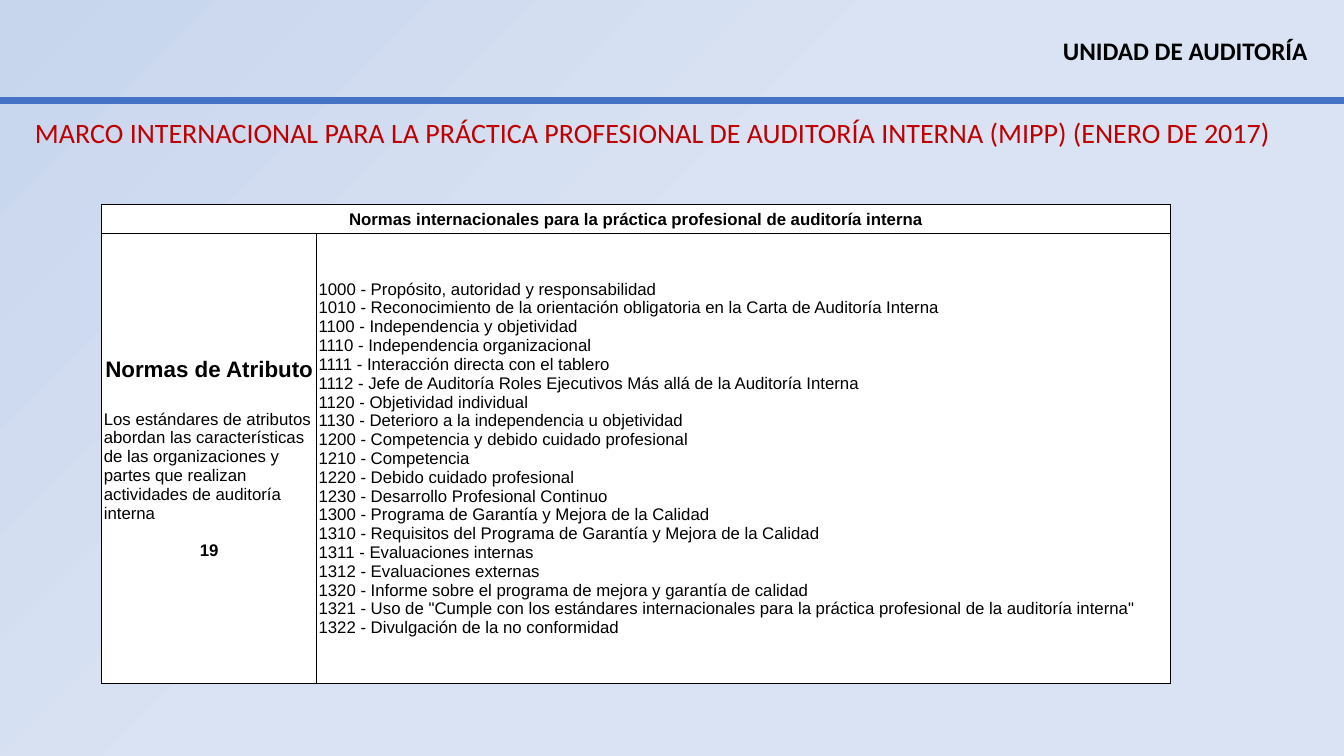
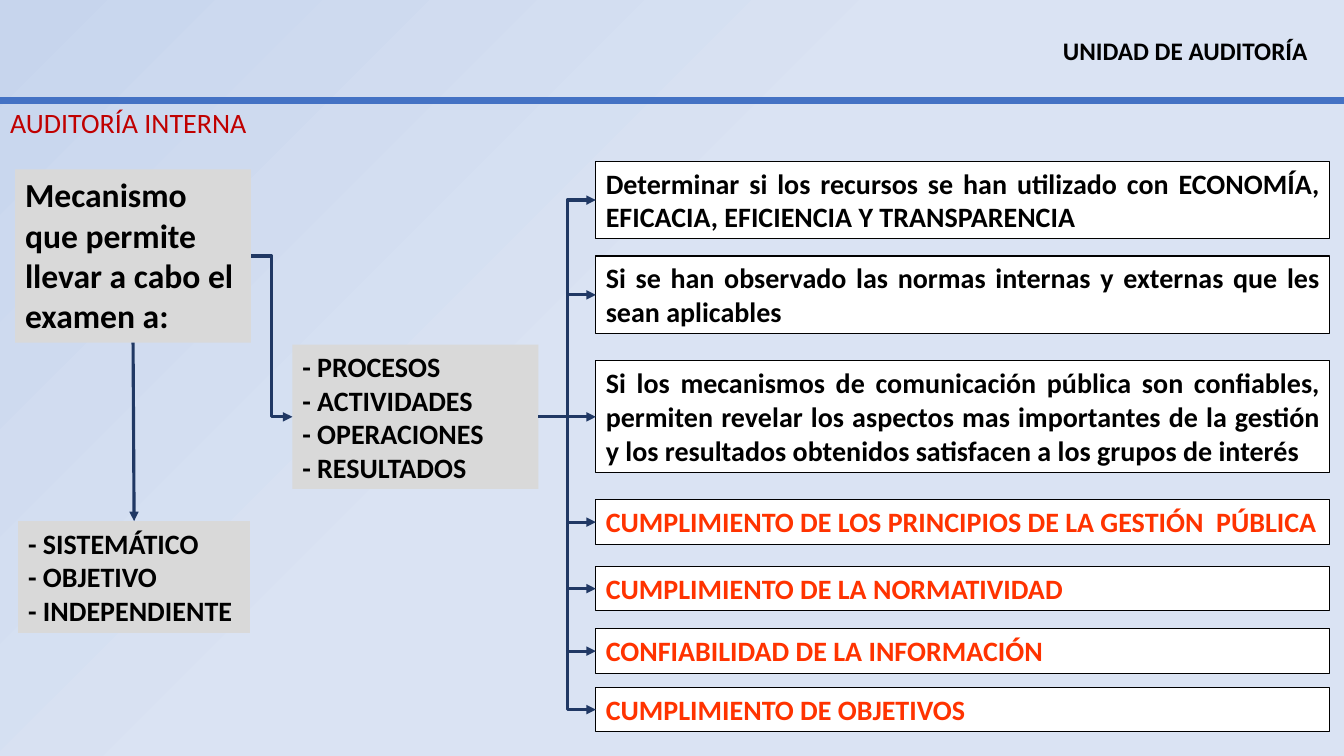
import pptx
import pptx.dml.color
import pptx.enum.shapes
import pptx.enum.text
import pptx.oxml
import pptx.oxml.ns
import pptx.util
from lxml import etree

Inches = pptx.util.Inches
Pt = pptx.util.Pt
RGBColor = pptx.dml.color.RGBColor
ALIGN = pptx.enum.text.PP_ALIGN
ANCHOR = pptx.enum.text.MSO_ANCHOR
AUTO_SIZE = pptx.enum.text.MSO_AUTO_SIZE
CONNECTOR = pptx.enum.shapes.MSO_CONNECTOR
qn = pptx.oxml.ns.qn

BLACK = RGBColor(0x00, 0x00, 0x00)
WHITE = RGBColor(0xFF, 0xFF, 0xFF)
GRAY = RGBColor(0xD9, 0xD9, 0xD9)
RED = RGBColor(0xC0, 0x00, 0x00)
ORANGE = RGBColor(0xFF, 0x33, 0x00)
BAND_BLUE = RGBColor(0x44, 0x72, 0xC4)
ARROW_BLUE = RGBColor(0x20, 0x38, 0x64)
BACKGROUND_LIGHT = RGBColor(0xDA, 0xE3, 0xF3)
BACKGROUND_DARK = RGBColor(0xC7, 0xD5, 0xED)

SLIDE_WIDTH, SLIDE_HEIGHT = 13.33, 7.5
TITLE_ONLY = 5
TOP, LEFT, BOTTOM, RIGHT = range(4)  # connection sites of a rectangle

ATTRIBUTE_STANDARDS = [
    "1000 - Propósito, autoridad y responsabilidad",
    "1010 - Reconocimiento de la orientación obligatoria en la Carta de Auditoría Interna",
    "1100 - Independencia y objetividad",
    "1110 - Independencia organizacional",
    "1111 - Interacción directa con el tablero",
    "1112 - Jefe de Auditoría Roles Ejecutivos Más allá de la Auditoría Interna",
    "1120 - Objetividad individual",
    "1130 - Deterioro a la independencia u objetividad",
    "1200 - Competencia y debido cuidado profesional",
    "1210 - Competencia",
    "1220 - Debido cuidado profesional",
    "1230 - Desarrollo Profesional Continuo",
    "1300 - Programa de Garantía y Mejora de la Calidad",
    "1310 - Requisitos del Programa de Garantía y Mejora de la Calidad",
    "1311 - Evaluaciones internas",
    "1312 - Evaluaciones externas",
    "1320 - Informe sobre el programa de mejora y garantía de calidad",
    '1321 - Uso de "Cumple con los estándares internacionales para la práctica profesional de la auditoría interna"',
    "1322 - Divulgación de la no conformidad",
]

# top, height, colour, text
AUDIT_GOALS = [
    (1.6, 0.77, BLACK, "Determinar si los recursos se han utilizado con ECONOMÍA, EFICACIA, EFICIENCIA Y TRANSPARENCIA"),
    (2.54, 0.77, BLACK, "Si se han observado las normas internas y externas que les sean aplicables"),
    (3.58, 1.11, BLACK, "Si los mecanismos de comunicación pública son confiables, permiten revelar los aspectos mas importantes de la gestión y los resultados obtenidos satisfacen a los grupos de interés"),
    (4.96, 0.44, ORANGE, "CUMPLIMIENTO DE LOS PRINCIPIOS DE LA GESTIÓN  PÚBLICA"),
    (5.62, 0.44, ORANGE, "CUMPLIMIENTO DE LA NORMATIVIDAD"),
    (6.24, 0.44, ORANGE, "CONFIABILIDAD DE LA INFORMACIÓN"),
    (6.82, 0.44, ORANGE, "CUMPLIMIENTO DE OBJETIVOS"),
]


def place(shape, left, top, width, height):
    shape.left, shape.top = Inches(left), Inches(top)
    shape.width, shape.height = Inches(width), Inches(height)


def format_paragraph(paragraph, size, color=BLACK, bold=False, align=ALIGN.LEFT, font="Calibri"):
    paragraph.alignment = align
    for run in paragraph.runs:
        run.font.name = font
        run.font.size = Pt(size)
        run.font.bold = bold
        run.font.color.rgb = color


def write(text_frame, text, size, **style):
    """Fill a text frame, one paragraph per line of text, in one style."""
    text_frame.text = text
    for paragraph in text_frame.paragraphs:
        format_paragraph(paragraph, size, **style)


def add_line(slide, kind, ends, color, width):
    connector = slide.shapes.add_connector(kind, *(Inches(value) for value in ends))
    connector.line.color.rgb = color
    connector.line.width = Pt(width)
    etree.SubElement(connector.element.spPr, qn("a:effectLst"))
    return connector


def add_arrow(slide, kind, start, start_site, end, end_site):
    connector = add_line(slide, kind, (0, 0, 1, 1), ARROW_BLUE, 2.25)
    connector.begin_connect(start, start_site)
    connector.end_connect(end, end_site)
    outline = connector.element.spPr.find(qn("a:ln"))
    etree.SubElement(outline, qn("a:tailEnd"), type="triangle")


def add_box(slide, box, text, fill, border=None, size=20, color=BLACK, align=ALIGN.LEFT):
    shape = slide.shapes.add_shape(
        pptx.enum.shapes.MSO_SHAPE.RECTANGLE, *(Inches(value) for value in box))
    shape.shadow.inherit = False
    shape.fill.solid()
    shape.fill.fore_color.rgb = fill
    if border is None:
        shape.line.fill.background()
    else:
        shape.line.color.rgb = border
        shape.line.width = Pt(0.75)
    frame = shape.text_frame
    frame.word_wrap = True
    frame.auto_size = AUTO_SIZE.SHAPE_TO_FIT_TEXT
    frame.vertical_anchor = ANCHOR.TOP
    write(frame, text, size, color=color, bold=True, align=align)
    return shape


def set_background(master):
    fill = master.background.fill
    fill.gradient()
    stops = ((0.54, BACKGROUND_LIGHT), (1, BACKGROUND_DARK))
    for stop, (position, color) in zip(fill.gradient_stops, stops):
        stop.position = position
        stop.color.rgb = color
    gradient = master.element.find(".//" + qn("a:gradFill"))
    gradient.remove(gradient.find(qn("a:lin")))
    circle = etree.SubElement(gradient, qn("a:path"), path="circle")
    etree.SubElement(circle, qn("a:fillToRect"), l="100000", t="100000")


def add_master_header(master, slide):
    """Build the header on a slide, then move it to the master that all slides share."""
    unit = slide.shapes.add_textbox(Inches(10.23), Inches(0.3), Inches(3.05), Inches(0.4))
    unit.text_frame.word_wrap = True
    unit.text_frame.auto_size = AUTO_SIZE.SHAPE_TO_FIT_TEXT
    write(unit.text_frame, "UNIDAD DE AUDITORÍA", 18, bold=True, align=ALIGN.CENTER)
    band = add_line(slide, CONNECTOR.STRAIGHT, (0, 1, SLIDE_WIDTH, 1), BAND_BLUE, 5)
    for shape_id, shape in enumerate((unit, band), start=101):
        shape.element.xpath(".//p:cNvPr")[0].set("id", str(shape_id))
        master.shapes.element.insert(2, shape.element)


def add_slide(presentation, title, box, align, wrap):
    slide = presentation.slides.add_slide(presentation.slide_layouts[TITLE_ONLY])
    shape = slide.shapes.title
    place(shape, *box)
    shape.text_frame.word_wrap = wrap
    shape.text_frame.auto_size = AUTO_SIZE.SHAPE_TO_FIT_TEXT
    shape.text_frame.vertical_anchor = ANCHOR.TOP
    write(shape.text_frame, title, 20, color=RED, align=align)
    return slide


def format_cell(cell):
    cell.fill.solid()
    cell.fill.fore_color.rgb = WHITE
    cell.vertical_anchor = ANCHOR.MIDDLE
    cell.margin_left = cell.margin_right = Inches(0.02)
    cell.margin_top = cell.margin_bottom = Inches(0.02)
    properties = cell._tc.get_or_add_tcPr()
    for index, side in enumerate(("lnL", "lnR", "lnT", "lnB")):
        border = etree.Element(qn("a:" + side), w=str(Pt(1)))
        solid = etree.SubElement(border, qn("a:solidFill"))
        etree.SubElement(solid, qn("a:srgbClr"), val=str(BLACK))
        properties.insert(index, border)


def add_standards_table(slide):
    table = slide.shapes.add_table(
        2, 2, Inches(1.01), Inches(2.03), Inches(10.6), Inches(4.75)).table
    table.first_row = table.horz_banding = False
    for column, width in zip(table.columns, (2.13, 8.47)):
        column.width = Inches(width)
    for row, height in zip(table.rows, (0.29, 4.46)):
        row.height = Inches(height)
    for cell in table.iter_cells():
        format_cell(cell)

    heading = table.cell(0, 0)
    heading.merge(table.cell(0, 1))
    write(heading.text_frame, "Normas internacionales para la práctica profesional de auditoría interna",
          12, bold=True, align=ALIGN.CENTER, font="Arial")

    summary = table.cell(1, 0).text_frame
    summary.text = "\n".join([
        "Normas de Atributo",
        "Los estándares de atributos abordan las características de las organizaciones "
        "y partes que realizan actividades de auditoría interna",
        "19",
    ])
    name, description, count = summary.paragraphs
    format_paragraph(name, 16, bold=True, align=ALIGN.CENTER, font="Arial")
    format_paragraph(description, 12, font="Arial")
    format_paragraph(count, 12, bold=True, align=ALIGN.CENTER, font="Arial")
    name.space_after = Pt(20)
    description.space_after = Pt(13.5)

    write(table.cell(1, 1).text_frame, "\n".join(ATTRIBUTE_STANDARDS),
          12, align=ALIGN.JUSTIFY, font="Arial")


def add_audit_diagram(slide):
    mechanism = add_box(slide, (0.15, 1.68, 2.34, 1.72),
                        "Mecanismo que permite llevar a cabo el examen a:", GRAY, size=24)
    qualities = add_box(slide, (0.18, 5.17, 2.3, 1.11),
                        "- SISTEMÁTICO\n- OBJETIVO\n- INDEPENDIENTE", GRAY)
    subjects = add_box(slide, (2.9, 3.42, 2.44, 1.43),
                       "- PROCESOS\n- ACTIVIDADES\n- OPERACIONES\n- RESULTADOS",
                       GRAY, align=ALIGN.JUSTIFY)
    add_arrow(slide, CONNECTOR.ELBOW, mechanism, RIGHT, subjects, LEFT)
    add_arrow(slide, CONNECTOR.STRAIGHT, mechanism, BOTTOM, qualities, TOP)
    for top, height, color, text in AUDIT_GOALS:
        goal = add_box(slide, (5.91, top, 7.28, height), text, WHITE,
                       border=BLACK, color=color, align=ALIGN.JUSTIFY)
        add_arrow(slide, CONNECTOR.ELBOW, subjects, RIGHT, goal, LEFT)


def main():
    presentation = pptx.Presentation()
    presentation.slide_width = Inches(SLIDE_WIDTH)
    presentation.slide_height = Inches(SLIDE_HEIGHT)
    master = presentation.slide_master
    set_background(master)

    standards = add_slide(
        presentation,
        "MARCO INTERNACIONAL PARA LA PRÁCTICA PROFESIONAL DE AUDITORÍA INTERNA (MIPP) (ENERO DE 2017)",
        (0.2, 1.1, 12.55, 0.44), ALIGN.CENTER, wrap=False)
    add_master_header(master, standards)
    add_standards_table(standards)

    audit = add_slide(presentation, "AUDITORÍA INTERNA",
                      (0, 1, SLIDE_WIDTH, 0.44), ALIGN.JUSTIFY, wrap=True)
    add_audit_diagram(audit)
    presentation.save("out.pptx")


if __name__ == "__main__":
    main()
